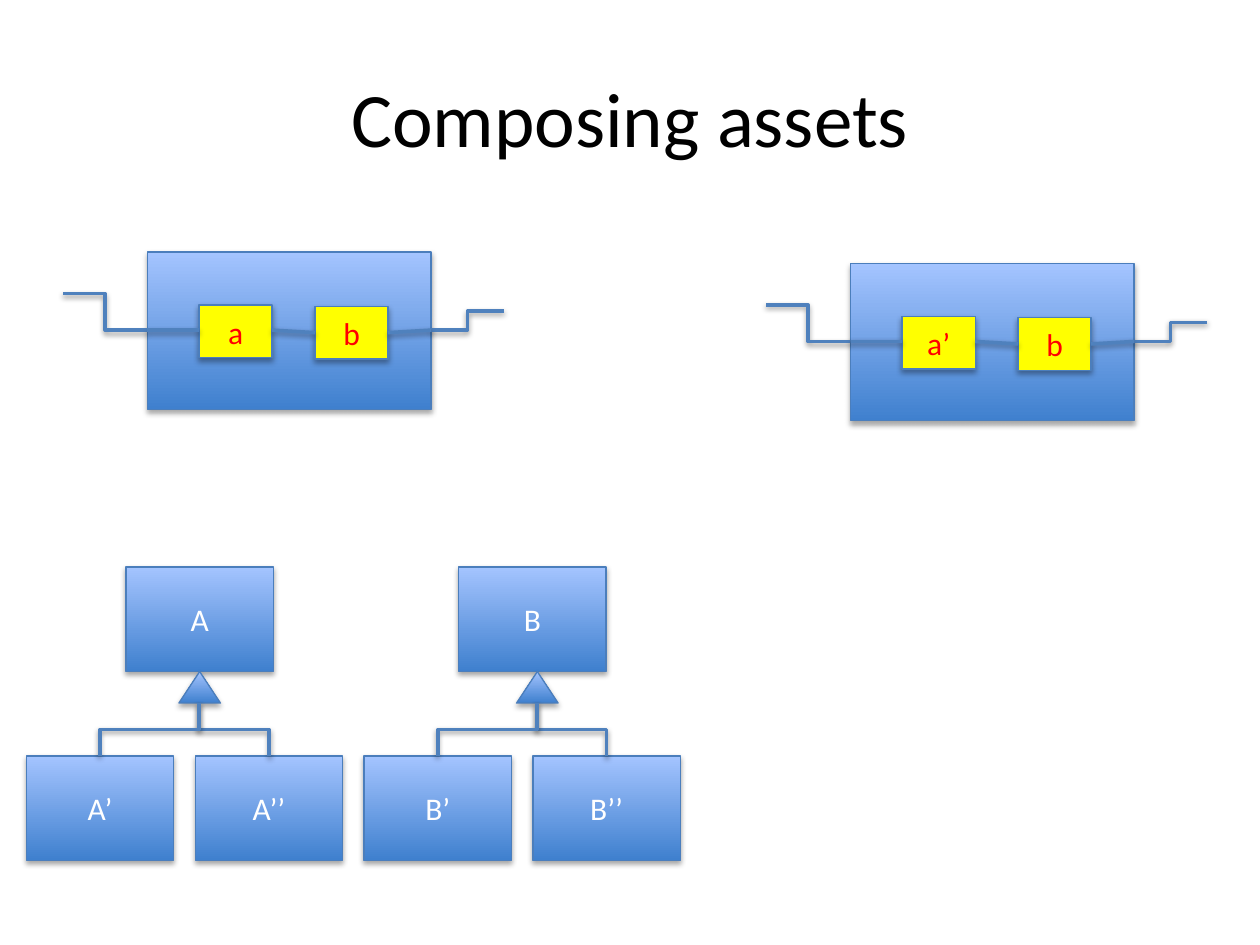
from dataclasses import dataclass

import lxml.etree
import pptx
import pptx.dml.color
import pptx.enum.dml
import pptx.enum.shapes
import pptx.enum.text
import pptx.oxml
import pptx.oxml.ns
import pptx.util

Inches = pptx.util.Inches
Pt = pptx.util.Pt
RGBColor = pptx.dml.color.RGBColor
MSO_SHAPE = pptx.enum.shapes.MSO_SHAPE
MSO_CONNECTOR = pptx.enum.shapes.MSO_CONNECTOR

FONT = "Calibri"
BLACK = RGBColor(0x00, 0x00, 0x00)
WHITE = RGBColor(0xFF, 0xFF, 0xFF)
RED = RGBColor(0xFF, 0x00, 0x00)
YELLOW = RGBColor(0xFF, 0xFF, 0x00)
DARK_BLUE = RGBColor(0x3F, 0x80, 0xCE)
LIGHT_BLUE = RGBColor(0xA4, 0xC4, 0xFF)
OUTLINE = RGBColor(0x4B, 0x7E, 0xBC)
WIRE = RGBColor(0x4F, 0x81, 0xBD)

CLASS_W, CLASS_H = 1.17, 0.83
PART_W, PART_H = 0.58, 0.42


@dataclass
class Assembly:
    """Container with two wired parts, placed by its top left corner."""
    x: float
    y: float
    first: str
    second: str


@dataclass
class Family:
    """Parent class over two subclasses; x is the left edge of the first."""
    name: str
    x: float
    parent_x: float


ASSEMBLIES = [Assembly(1.17, 2.0, "a", "b"), Assembly(6.75, 2.09, "a’", "b")]
FAMILIES = [Family("A", 0.21, 1.0), Family("B", 2.89, 3.64)]


def add_shadow(sp, distance: int, alpha: int) -> None:
    """Cast a soft shadow straight down; call after the line is set."""
    ns = pptx.oxml.ns.nsdecls("a")
    sp._element.spPr.append(pptx.oxml.parse_xml(
        f'<a:effectLst {ns}><a:outerShdw blurRad="40000" dist="{distance}" '
        f'dir="5400000" rotWithShape="0"><a:srgbClr val="000000">'
        f'<a:alpha val="{alpha}"/></a:srgbClr></a:outerShdw></a:effectLst>'))


def add_text(sp, text: str, size: float, color: RGBColor) -> None:
    tf = sp.text_frame
    tf.word_wrap = True
    tf.vertical_anchor = pptx.enum.text.MSO_ANCHOR.MIDDLE
    p = tf.paragraphs[0]
    p.alignment = pptx.enum.text.PP_ALIGN.CENTER
    r = p.add_run()
    r.text = text
    r.font.name = FONT
    r.font.size = Pt(size)
    r.font.color.rgb = color


def add_block(s, kind, x: float, y: float, w: float, h: float,
              text: str = "", part: bool = False) -> None:
    """Draw a blue gradient shape, or a yellow one for a part."""
    sp = s.shapes.add_shape(kind, Inches(x), Inches(y), Inches(w), Inches(h))
    if part:
        sp.fill.solid()
        sp.fill.fore_color.rgb = YELLOW
    else:
        sp.fill.gradient()
        sp.fill.gradient_angle = 90
        for stop, color in zip(sp.fill.gradient_stops, (DARK_BLUE, LIGHT_BLUE)):
            stop.color.rgb = color
    sp.line.color.rgb = OUTLINE
    sp.line.width = Pt(0.75)
    add_shadow(sp, 23000, 35000)
    if text:
        add_text(sp, text, 18, RED if part else WHITE)


def add_wire(s, kind, x1: float, y1: float, x2: float, y2: float):
    cn = s.shapes.add_connector(kind, Inches(x1), Inches(y1),
                                Inches(x2), Inches(y2))
    cn.line.color.rgb = WIRE
    cn.line.width = Pt(2)
    add_shadow(cn, 20000, 38000)
    return cn


def add_branch(s, x1: float, y1: float, x2: float, y2: float) -> None:
    """Elbow that leaves downwards: a sideways elbow turned by a quarter."""
    cx, cy = (x1 + x2) / 2, (y1 + y2) / 2
    half_w, half_h = (y2 - y1) / 2, abs(x2 - x1) / 2
    turn = 270 if x2 > x1 else 90
    if turn == 270:
        half_w = -half_w
    cn = add_wire(s, MSO_CONNECTOR.ELBOW, cx - half_w, cy - half_h,
                  cx + half_w, cy + half_h)
    cn._element.spPr.xfrm.set("rot", str(turn * 60000))


def add_assembly(s, a: Assembly) -> None:
    left, right = a.x, a.x + 2.25
    first_x, second_x = left + 0.41, left + 1.33
    wire_y, second_wire_y = a.y + 0.62, a.y + 0.64
    add_block(s, MSO_SHAPE.RECTANGLE, left, a.y, 2.25, 1.25)
    add_block(s, MSO_SHAPE.RECTANGLE, first_x, a.y + 0.42, PART_W, PART_H,
              a.first, part=True)
    add_block(s, MSO_SHAPE.RECTANGLE, second_x, a.y + 0.43, PART_W, PART_H,
              a.second, part=True)
    add_wire(s, MSO_CONNECTOR.ELBOW, left, wire_y, left - 0.67, wire_y - 0.29)
    add_wire(s, MSO_CONNECTOR.ELBOW, right, wire_y, right + 0.58, wire_y - 0.15)
    add_wire(s, MSO_CONNECTOR.STRAIGHT, first_x, wire_y, left, wire_y)
    add_wire(s, MSO_CONNECTOR.STRAIGHT, first_x + PART_W, wire_y,
             second_x, second_wire_y)
    add_wire(s, MSO_CONNECTOR.STRAIGHT, second_x + PART_W, second_wire_y,
             right, wire_y)


def add_family(s, f: Family) -> None:
    stem_x = f.x + 1.37
    child_y = 6.0
    children = [(f.x, f.name + "’"), (f.x + 1.34, f.name + "’’")]
    add_block(s, MSO_SHAPE.RECTANGLE, f.parent_x, 4.5, CLASS_W, CLASS_H, f.name)
    for x, name in children:
        add_block(s, MSO_SHAPE.RECTANGLE, x, child_y, CLASS_W, CLASS_H, name)
    add_block(s, MSO_SHAPE.ISOSCELES_TRIANGLE, stem_x - 0.16, 5.33, 0.33, 0.25)
    for x, _ in reversed(children):
        add_branch(s, stem_x, 5.58, x + CLASS_W / 2, child_y)


def main() -> None:
    prs = pptx.Presentation()
    prs.slide_width, prs.slide_height = Inches(10), Inches(7.5)
    s = prs.slides.add_slide(prs.slide_layouts[6])
    title = s.shapes.add_textbox(Inches(0.5), Inches(0.3), Inches(9), Inches(1.25))
    add_text(title, "Composing assets", 44, BLACK)
    for f in FAMILIES:
        add_family(s, f)
    for a in ASSEMBLIES:
        add_assembly(s, a)
    prs.save("out.pptx")


if __name__ == "__main__":
    main()
